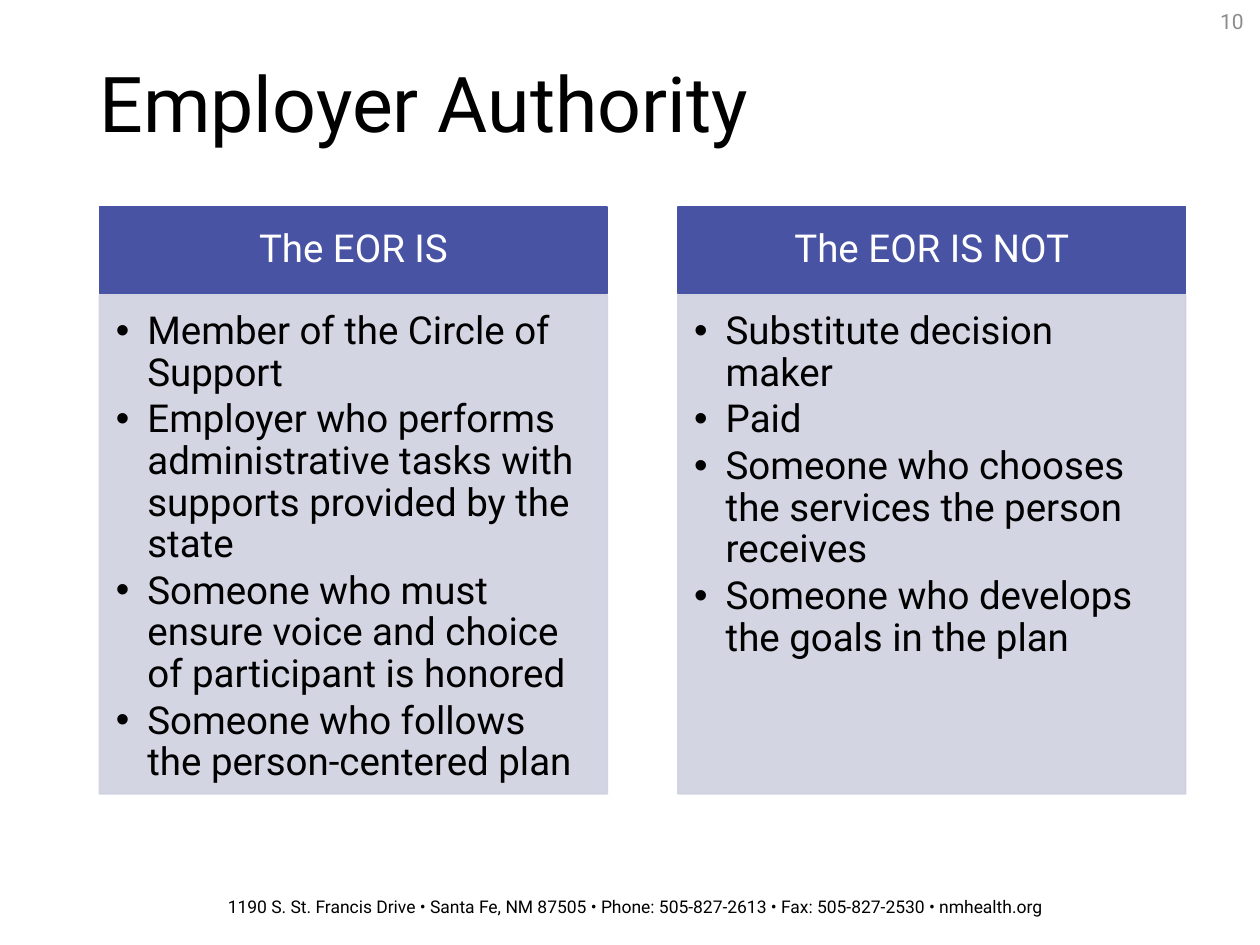
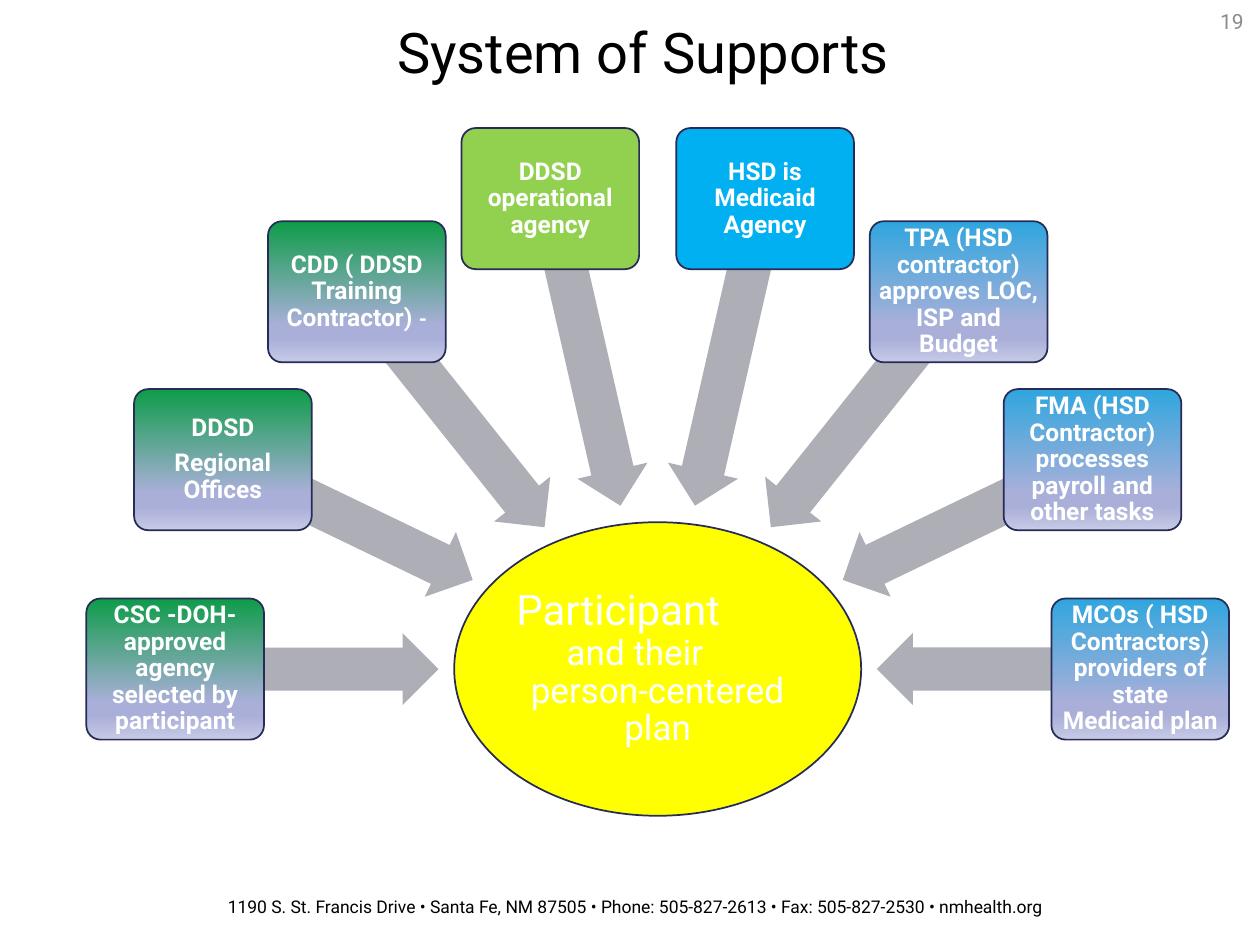
"""Build two slides on employer authority and the system of supports."""
from dataclasses import dataclass
from math import cos, pi, sin

from lxml.etree import SubElement
from pptx import Presentation
from pptx.dml.color import RGBColor
from pptx.enum.shapes import MSO_SHAPE as Shape
from pptx.enum.text import MSO_ANCHOR as Anchor, MSO_AUTO_SIZE as AutoSize, PP_ALIGN as Align
from pptx.oxml.ns import qn
from pptx.util import Inches, Pt


@dataclass(frozen=True)
class Theme:
    font: str = "Roboto"
    black: str = "000000"
    white: str = "FFFFFF"
    number_gray: str = "8C8C8C"
    heading_blue: str = "4953A4"
    list_lavender: str = "D0D1E0"
    outline: str = "262C56"
    arrow_gray: str = "ADAEB6"
    hub_yellow: str = "FFFF00"
    agency_green: str = "92D050"
    agency_blue: str = "00B0F0"
    contractor_green: str = "0E9C49"
    contractor_blue: str = "2FA6DE"
    fade: tuple = ((74, "AAAFD9"), (83, "AAAFD9"), (100, "C6CAE6"))
    title_size: int = 44
    diagram_title_size: int = 32
    hub_size: int = 24
    hub_detail_size: int = 20
    list_size: int = 22
    box_size: int = 14
    dash_size: int = 12
    number_size: int = 12
    footer_size: int = 10


theme = Theme()
FOOTER = "1190 S. St. Francis Drive • Santa Fe, NM 87505 • Phone: 505-827-2613 • Fax: 505-827-2530 • nmhealth.org"


def write(shape, paragraphs, size, color, align=Align.LEFT, anchor=Anchor.MIDDLE,
          insets=(0.1, 0.05, 0.1, 0.05), bold=False, spacing=0.9, after=0, bullet=False):
    """Fill a shape with paragraphs, each a list of (text, size) runs or one string."""
    frame = shape.text_frame
    frame.word_wrap = True
    frame.auto_size = AutoSize.NONE
    frame.vertical_anchor = anchor
    frame.margin_left, frame.margin_top, frame.margin_right, frame.margin_bottom = map(Inches, insets)
    for index, runs in enumerate(paragraphs):
        paragraph = frame.add_paragraph() if index else frame.paragraphs[0]
        if bullet:
            properties = paragraph._p.get_or_add_pPr()
            properties.set("marL", str(Inches(0.25)))
            properties.set("indent", str(Inches(-0.25)))
            SubElement(properties, qn("a:buChar")).set("char", "•")
        paragraph.alignment = align
        paragraph.line_spacing = spacing
        paragraph.space_before = Pt(0)
        paragraph.space_after = Pt(after)
        for text, run_size in [(runs, size)] if isinstance(runs, str) else runs:
            run = paragraph.add_run()
            run.text = text
            run.font.name = theme.font
            run.font.size = Pt(run_size)
            run.font.bold = bold
            run.font.color.rgb = RGBColor.from_string(color)


def place(shape, left, top, width, height, fill=None, line=None):
    """Position a shape and give it a flat fill and outline."""
    shape.left, shape.top, shape.width, shape.height = map(Inches, (left, top, width, height))
    if fill:
        shape.fill.solid()
        shape.fill.fore_color.rgb = RGBColor.from_string(fill)
        if line:
            shape.line.color.rgb = RGBColor.from_string(line)
            shape.line.width = Pt(1)
        else:
            shape.line.fill.background()
    return shape


presentation = Presentation()
presentation.slide_width, presentation.slide_height = Inches(10), Inches(7.5)
comparison_layout, title_layout = presentation.slide_layouts[4], presentation.slide_layouts[5]

slides = []
for layout, title, title_place, title_size, align, number in (
    (comparison_layout, "Employer Authority", (0.69, 0.4, 8.62, 0.91), theme.title_size, Align.LEFT, "10"),
    (title_layout, "System of Supports", (0.69, -0.04, 8.83, 0.96), theme.diagram_title_size, Align.CENTER, "19"),
):
    slide = presentation.slides.add_slide(layout)
    slides.append(slide)
    write(place(slide.shapes.title, *title_place), [title], title_size, theme.black, align)
    footer = slide.shapes.add_textbox(Inches(1.71), Inches(7.06), Inches(7.15), Inches(0.27))
    write(footer, [FOOTER], theme.footer_size, theme.black, anchor=Anchor.TOP, spacing=1.0)
    page_number = slide.shapes.add_textbox(Inches(8.66), Inches(0.03), Inches(1.31), Inches(0.28))
    write(page_number, [number], theme.number_size, theme.number_gray, Align.RIGHT, spacing=1.0)

authority_slide, supports_slide = slides

columns = (
    ("The EOR IS", [
        "Member of the Circle of Support",
        "Employer who performs administrative tasks with supports provided by the state",
        "Someone who must ensure voice and choice of participant is honored",
        "Someone who follows the person-centered plan",
    ]),
    ("The EOR IS NOT", [
        "Substitute decision maker",
        "Paid",
        "Someone who chooses the services the person receives",
        "Someone who develops the goals in the plan",
    ]),
)
for index, (heading_text, items) in enumerate(columns):
    left = 0.79 + 4.59 * index
    heading = authority_slide.placeholders[1 + 2 * index]
    place(heading, left, 1.64, 4.03, 0.69, theme.heading_blue, theme.heading_blue)
    write(heading, [heading_text], theme.list_size, theme.white, Align.CENTER, insets=(0.17, 0.1, 0.17, 0.1))
    item_list = authority_slide.placeholders[2 + 2 * index]
    place(item_list, left, 2.34, 4.03, 3.96, theme.list_lavender, theme.list_lavender)
    for color in item_list._element.spPr.iter(qn("a:srgbClr")):
        SubElement(color, qn("a:alpha")).set("val", "90000")
    write(item_list, items, theme.list_size, theme.black, anchor=Anchor.TOP,
          insets=(0.13, 0.13, 0.17, 0.19), after=3, bullet=True)

hub_x, hub_y = 5.22, 5.31
hub_width, hub_height = 3.23, 2.33
box_width, box_height = 1.41, 1.12
box_radius = 3.83
arrow_height = 0.57
arrow_lengths = (2.09, 2.2, 2.39, 2.5)

hub = supports_slide.shapes.add_shape(Shape.OVAL, 0, 0, 0, 0)
hub.shadow.inherit = False
place(hub, hub_x - hub_width / 2, hub_y - hub_height / 2, hub_width, hub_height, theme.hub_yellow, theme.outline)
write(hub, [[("Participant", theme.hub_size)], "and their", "person-centered plan"],
      theme.hub_detail_size, theme.white, Align.CENTER, insets=(0.02,) * 4)
participant_line, joining_line = hub.text_frame.paragraphs[:2]
participant_line.alignment = joining_line.alignment = Align.LEFT
joining_line._p.get_or_add_pPr().set("marL", str(Inches(0.4)))

supports = (
    (["CSC -DOH-approved agency selected by participant"], theme.contractor_green, True),
    (["DDSD", "Regional Offices"], theme.contractor_green, True),
    ([[("CDD ( DDSD Training Contractor) ", theme.box_size), ("-", theme.dash_size)]],
     theme.contractor_green, True),
    (["DDSD operational agency"], theme.agency_green, False),
    (["HSD is Medicaid Agency"], theme.agency_blue, False),
    (["TPA (HSD contractor) approves LOC, ISP and Budget"], theme.contractor_blue, True),
    (["FMA (HSD Contractor) processes payroll and other tasks"], theme.contractor_blue, True),
    (["MCOs ( HSD Contractors) providers of state Medicaid plan"], theme.contractor_blue, True),
)
last = len(supports) - 1
for index, (text, fill, faded) in enumerate(supports):
    angle = pi * index / last
    length = arrow_lengths[min(index, last - index)]
    arrow_radius = box_radius - length / 2
    arrow_x, arrow_y = hub_x - arrow_radius * cos(angle), hub_y - arrow_radius * sin(angle)
    arrow = supports_slide.shapes.add_shape(Shape.LEFT_ARROW, 0, 0, 0, 0)
    arrow.shadow.inherit = False
    place(arrow, arrow_x - length / 2, arrow_y - arrow_height / 2, length, arrow_height, theme.arrow_gray)
    arrow.adjustments[0], arrow.adjustments[1] = 0.6, 0.5
    arrow.rotation = (180 + 180 * index / last) % 360

    box_x, box_y = hub_x - box_radius * cos(angle), hub_y - box_radius * sin(angle)
    box = supports_slide.shapes.add_shape(Shape.ROUNDED_RECTANGLE, 0, 0, 0, 0)
    box.shadow.inherit = False
    place(box, box_x - box_width / 2, box_y - box_height / 2, box_width, box_height, fill, theme.outline)
    box.adjustments[0] = 0.1
    if faded:
        box.fill.gradient()
        box.fill.gradient_angle = 270
        stops = box._element.spPr.find(".//" + qn("a:gsLst"))
        for stop in list(stops):
            stops.remove(stop)
        for position, color in ((0, fill), *theme.fade):
            stop = SubElement(stops, qn("a:gs"), pos=str(position * 1000))
            SubElement(stop, qn("a:srgbClr"), val=color)
    write(box, text, theme.box_size, theme.white, Align.CENTER, insets=(0.03,) * 4, bold=True, after=5)

presentation.save("out.pptx")
